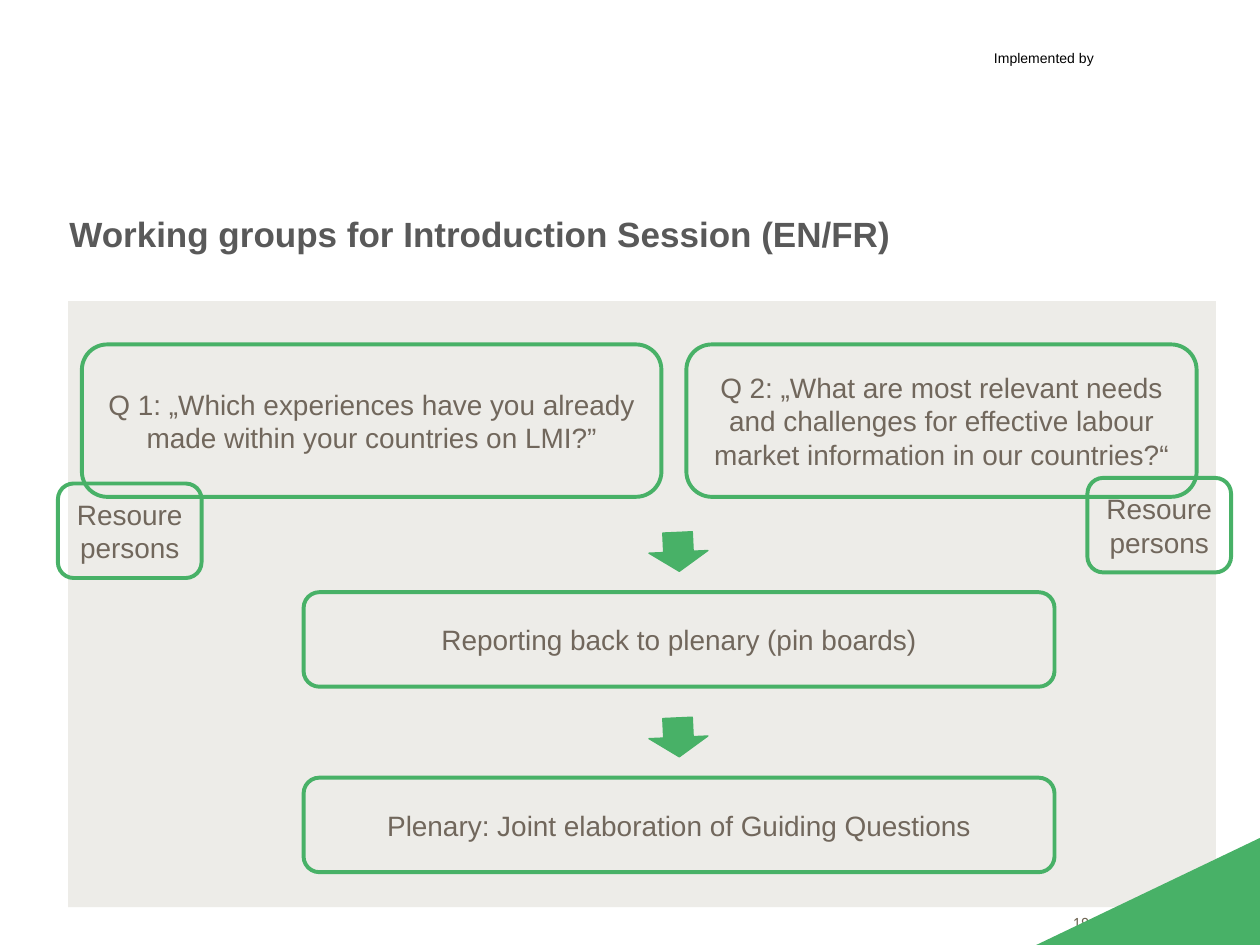
from lxml import etree
from pptx import Presentation
from pptx import util as u
from pptx.dml.color import RGBColor
from pptx.enum import shapes, text
from pptx.oxml.ns import qn

GREEN = RGBColor(0x48, 0xB1, 0x67)
PANEL = RGBColor(0xEC, 0xEA, 0xE6)
BROWN = RGBColor(0x71, 0x67, 0x5C)
NUMBER = RGBColor(0x6E, 0x64, 0x52)
TITLE = RGBColor(0x59, 0x59, 0x59)
BLACK = RGBColor(0, 0, 0)

# Step boxes share left edge, width and height
STEP_LEFT, STEP_WIDTH, BOX_HEIGHT = 173.5, 429.1, 54
STEP_TOPS = (338.4, 444.4)
ARROW_GAP = 34.2
PERSONS_WIDTH = 82.1


def set_text(shape, content, size, color, font="Arial", bold=False, align=text.PP_ALIGN.LEFT):
    frame = shape.text_frame
    frame.word_wrap = True
    frame.text = content
    paragraph = frame.paragraphs[0]
    paragraph.alignment = align
    paragraph.font.name = font
    paragraph.font.size = u.Pt(size)
    paragraph.font.bold = bold
    paragraph.font.color.rgb = color
    return frame


def add_label(slide, box, content, size, color, font="Arial"):
    set_text(slide.shapes.add_textbox(*map(u.Pt, box)), content, size, color, font)


def add_filled(slide, kind, box, color, rotation=0):
    shape = slide.shapes.add_shape(kind, *map(u.Pt, box))
    shape.shadow.inherit = False
    shape.fill.solid()
    shape.fill.fore_color.rgb = color
    shape.line.fill.background()
    shape.rotation = rotation
    return shape


def add_panel(slide):
    panel = add_filled(slide, shapes.MSO_SHAPE.RECTANGLE, (38.9, 172.1, 655.9, 346.3), PANEL)
    color = next(panel.element.iter(qn("a:srgbClr")))
    etree.SubElement(color, qn("a:alpha")).set("val", "90000")


def add_outlined_box(slide, box, content):
    shape = slide.shapes.add_shape(shapes.MSO_SHAPE.ROUNDED_RECTANGLE, *map(u.Pt, box))
    shape.shadow.inherit = False
    shape.fill.background()
    shape.line.color.rgb = GREEN
    shape.line.width = u.Pt(2.25)
    frame = set_text(shape, content, 16, BROWN, align=text.PP_ALIGN.CENTER)
    frame.vertical_anchor = text.MSO_ANCHOR.MIDDLE


def add_arrow(slide, top):
    arrow = add_filled(slide, shapes.MSO_SHAPE.DOWN_ARROW, (370.8, top, 33.8, 22.3), GREEN, 357.4)
    arrow.line.color.rgb = GREEN
    arrow.line.width = u.Pt(0.75)


def set_title(slide, content):
    title = slide.shapes.title
    title.left, title.top, title.width, title.height = map(u.Pt, (32.4, 118.1, 524.9, 39.6))
    frame = set_text(title, content, 20, TITLE, bold=True)
    frame.vertical_anchor = text.MSO_ANCHOR.TOP
    frame.auto_size = text.MSO_AUTO_SIZE.NONE


def main():
    presentation = Presentation()
    presentation.slide_width, presentation.slide_height = u.Pt(720), u.Pt(540)
    slide = presentation.slides.add_slide(presentation.slide_layouts[5])

    # Header, page number and background
    set_title(slide, "Working groups for Introduction Session (EN/FR)")
    add_label(slide, (606.2, 518.4, 72.7, 19.4), "18", 10, NUMBER, "Arial Narrow")
    add_label(slide, (560.9, 24.5, 84.2, 17.3), "Implemented by", 8, BLACK)
    add_panel(slide)
    add_filled(slide, shapes.MSO_SHAPE.RIGHT_TRIANGLE, (619.9, 443.5, 64.8, 135.4), GREEN, 270)

    # Working group questions
    add_outlined_box(slide, (46.8, 196.8, 331.2, 87.1),
                     "Q 1: „Which experiences have you already made within your countries on LMI?”")
    add_outlined_box(slide, (392.2, 196.8, 291.6, 87.1),
                     "Q 2: „What are most relevant needs and challenges for effective labour "
                     "market information in our countries?“")

    # Resource persons, one box per group
    for left, top in ((33.1, 276.3), (621.4, 273.1)):
        add_outlined_box(slide, (left, top, PERSONS_WIDTH, BOX_HEIGHT), "Resoure persons")

    # Plenary steps, each below its arrow
    steps = ("Reporting back to plenary (pin boards)",
             "Plenary: Joint elaboration of Guiding Questions")
    for top, step in zip(STEP_TOPS, steps):
        add_arrow(slide, top - ARROW_GAP)
        add_outlined_box(slide, (STEP_LEFT, top, STEP_WIDTH, BOX_HEIGHT), step)

    presentation.save("out.pptx")


if __name__ == "__main__":
    main()
